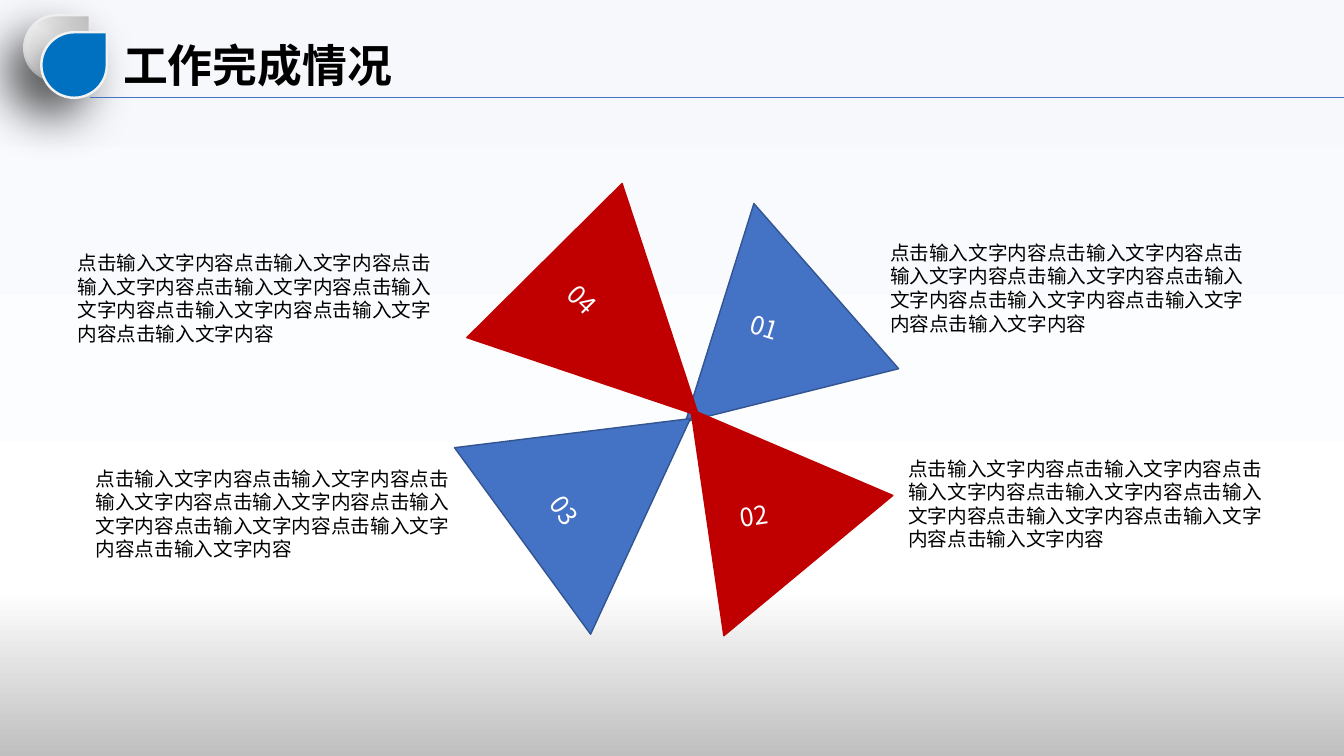
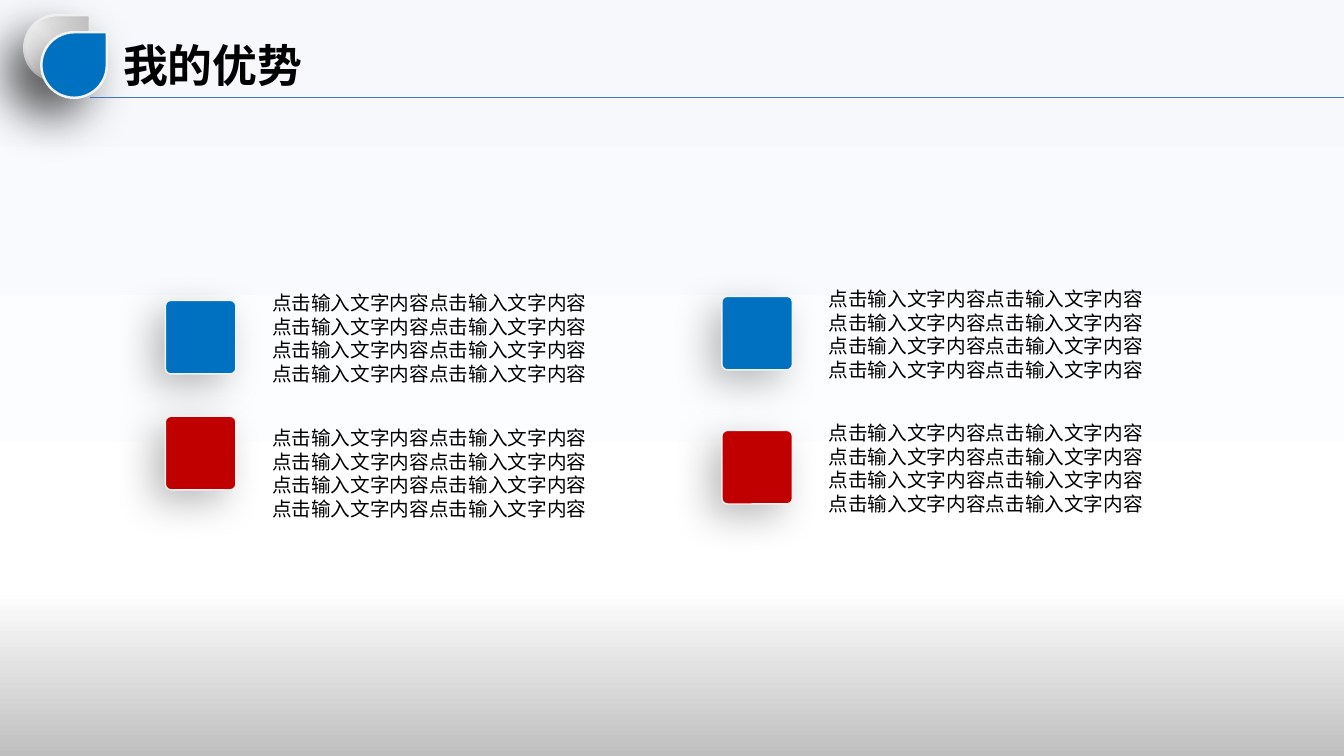
from lxml import etree
from pptx import Presentation
from pptx.dml.color import RGBColor
from pptx.enum.shapes import MSO_CONNECTOR, MSO_SHAPE
from pptx.enum.text import MSO_ANCHOR, MSO_AUTO_SIZE, PP_ALIGN
from pptx.oxml.ns import qn
from pptx.util import Inches, Pt

TEARDROP = MSO_SHAPE.TEAR
TRIANGLE = MSO_SHAPE.ISOSCELES_TRIANGLE
ROUNDED = MSO_SHAPE.ROUNDED_RECTANGLE
STRAIGHT = MSO_CONNECTOR.STRAIGHT
TOP, MIDDLE = MSO_ANCHOR.TOP, MSO_ANCHOR.MIDDLE
LEFT, CENTER = PP_ALIGN.LEFT, PP_ALIGN.CENTER
GROW = MSO_AUTO_SIZE.SHAPE_TO_FIT_TEXT

COLORS = {
    "black": "000000", "white": "FFFFFF", "blue": "0070C0", "red": "C00000",
    "accent": "4472C4", "accent_dark": "325491", "rim": "F2F2F2",
}
FONT = "Noto Sans CJK SC"
LINE_HEIGHT = 1.2  # line pitch as a multiple of the text size
PAGE_STOPS = [(0, "F6F8FC"), (78, "FFFFFF"), (100, "BFBFBF")]
SILVER_STOPS = [(0, "FFFFFF"), (50, "F2F2F2"), (100, "BFBFBF")]
DEEP_SHADOW = {"alpha": 50, "blur": 35, "dist": 20}
SOFT_SHADOW = {"alpha": 26, "blur": 27, "dist": 12}
BODY = "点击输入文字内容" * 8


def rgb(name):
    return RGBColor.from_string(COLORS[name])


def add_xml(parent, tag, **attrs):
    child = etree.SubElement(parent, qn(tag))
    for key, value in attrs.items():
        child.set(key, str(value))
    return child


class Deck:
    """Holds the shared style and the slide being built."""

    def __init__(self):
        self.prs = Presentation()
        self.prs.slide_width, self.prs.slide_height = Inches(13.33), Inches(7.5)
        self.s = None
        # Page background, set once on the master
        fill = self.prs.slide_master.background.fill
        fill.solid()
        fill.fore_color.rgb = rgb("white")
        bg = self.prs.slide_master.element.find(".//" + qn("p:bgPr"))
        self.gradient(bg, PAGE_STOPS, 90)

    def gradient(self, parent, stops, angle):
        """Replace the solid fill of parent with a linear gradient."""
        grad = add_xml(parent, "a:gradFill", rotWithShape=1)
        stop_list = add_xml(grad, "a:gsLst")
        for pos, color in stops:
            stop = add_xml(stop_list, "a:gs", pos=pos * 1000)
            add_xml(stop, "a:srgbClr", val=color)
        add_xml(grad, "a:lin", ang=angle * 60000, scaled=0)
        parent.replace(parent.find(qn("a:solidFill")), grad)

    def slide(self, title):
        """Start a slide with its corner mark, rule and title."""
        self.s = self.prs.slides.add_slide(self.prs.slide_layouts[5])
        back = self.shape(TEARDROP, (0.24, 0.15, 0.65, 0.65), "white", "rim", 1.75, DEEP_SHADOW)
        self.gradient(back.element.spPr, SILVER_STOPS, 315)
        self.shape(TEARDROP, (0.41, 0.32, 0.65, 0.65), "blue", "rim", 1.75, DEEP_SHADOW)
        self.rule(0.89, 13.33, 0.97)
        sp = self.s.shapes.title
        sp.left, sp.top, sp.width, sp.height = map(Inches, (1.12, 0.32, 4.2, 0.64))
        self.text(sp.text_frame, title, 32, bold=True)

    def rule(self, left, right, y):
        line = self.s.shapes.add_connector(STRAIGHT, *map(Inches, (left, y, right, y)))
        line.line.color.rgb = rgb("accent")
        line.line.width = Pt(0.5)
        add_xml(line.element.spPr, "a:effectLst")

    def shape(self, kind, box, fill, line, width=1, shadow=None):
        sp = self.s.shapes.add_shape(kind, *map(Inches, box))
        sp.fill.solid()
        sp.fill.fore_color.rgb = rgb(fill)
        sp.line.color.rgb = rgb(line)
        sp.line.width = Pt(width)
        sp.shadow.inherit = False
        if shadow:
            effects = sp.element.spPr.find(qn("a:effectLst"))
            outer = add_xml(effects, "a:outerShdw", blurRad=Pt(shadow["blur"]),
                            dist=Pt(shadow["dist"]), dir=135 * 60000,
                            algn="tr", rotWithShape=0)
            color = add_xml(outer, "a:srgbClr", val=COLORS["black"])
            add_xml(color, "a:alpha", val=shadow["alpha"] * 1000)
        return sp

    def text(self, tf, text, size, color="black", bold=False, align=LEFT, anchor=TOP, fit=GROW):
        frame = {"word_wrap": True, "vertical_anchor": anchor, "auto_size": fit}
        for key, value in frame.items():
            setattr(tf, key, value)
        p = tf.paragraphs[0]
        p.alignment = align
        p.line_spacing = Pt(size * LINE_HEIGHT)
        r = p.add_run()
        r.text = text
        for key, value in {"name": FONT, "size": Pt(size), "bold": bold}.items():
            setattr(r.font, key, value)
        r.font.color.rgb = rgb(color)
        add_xml(r.font._element, "a:ea", typeface=FONT)

    def body(self, left, top, width):
        tb = self.s.shapes.add_textbox(*map(Inches, (left, top, width, 1.04)))
        self.text(tb.text_frame, BODY, 14)

    def blade(self, label, box, angle, fill, line, flip=False, upright=False):
        """Add one numbered triangle of the pinwheel."""
        sp = self.shape(TRIANGLE, box, fill, line)
        sp.rotation = angle
        if flip:
            sp.element.spPr.xfrm.set("flipV", "1")
        tf = sp.text_frame
        self.text(tf, label, 18, "white", align=CENTER, anchor=MIDDLE, fit=MSO_AUTO_SIZE.NONE)
        if not upright:
            tf._txBody.bodyPr.set("vert", "vert270")

    def card(self, left, top, fill):
        sp = self.shape(ROUNDED, (left, top, 0.7, 0.73), fill, "rim", shadow=SOFT_SHADOW)
        sp.adjustments[0] = 0.08


def main():
    deck = Deck()

    # Work completed: pinwheel with four notes
    deck.slide("工作完成情况")
    deck.blade("01", (6.89, 2.45, 2.27, 1.86), 107.4, "accent", "accent_dark")
    deck.blade("03", (4.87, 3.73, 2.29, 2.06), 53.9, "accent", "accent_dark", upright=True)
    deck.blade("02", (6.8, 4.12, 2.27, 1.86), 261.7, "red", "red", flip=True)
    deck.blade("04", (5.08, 2.27, 2.17, 2.17), 315.2, "red", "red", flip=True)
    for left, top in [(8.73, 2.34), (8.91, 4.48), (0.67, 2.44), (0.85, 4.58)]:
        deck.body(left, top, 3.8)

    # My strengths: two columns of cards with notes
    deck.slide("我的优势")
    for left, rows in [(1.64, [(2.98, 2.84), (4.13, 4.18)]),
                       (7.16, [(2.94, 2.8), (4.27, 4.13)])]:
        for (card_top, note_top), fill in zip(rows, ("blue", "red")):
            deck.card(left, card_top, fill)
            deck.body(left + 0.96, note_top, 3.51)

    deck.prs.save("out.pptx")


if __name__ == "__main__":
    main()
